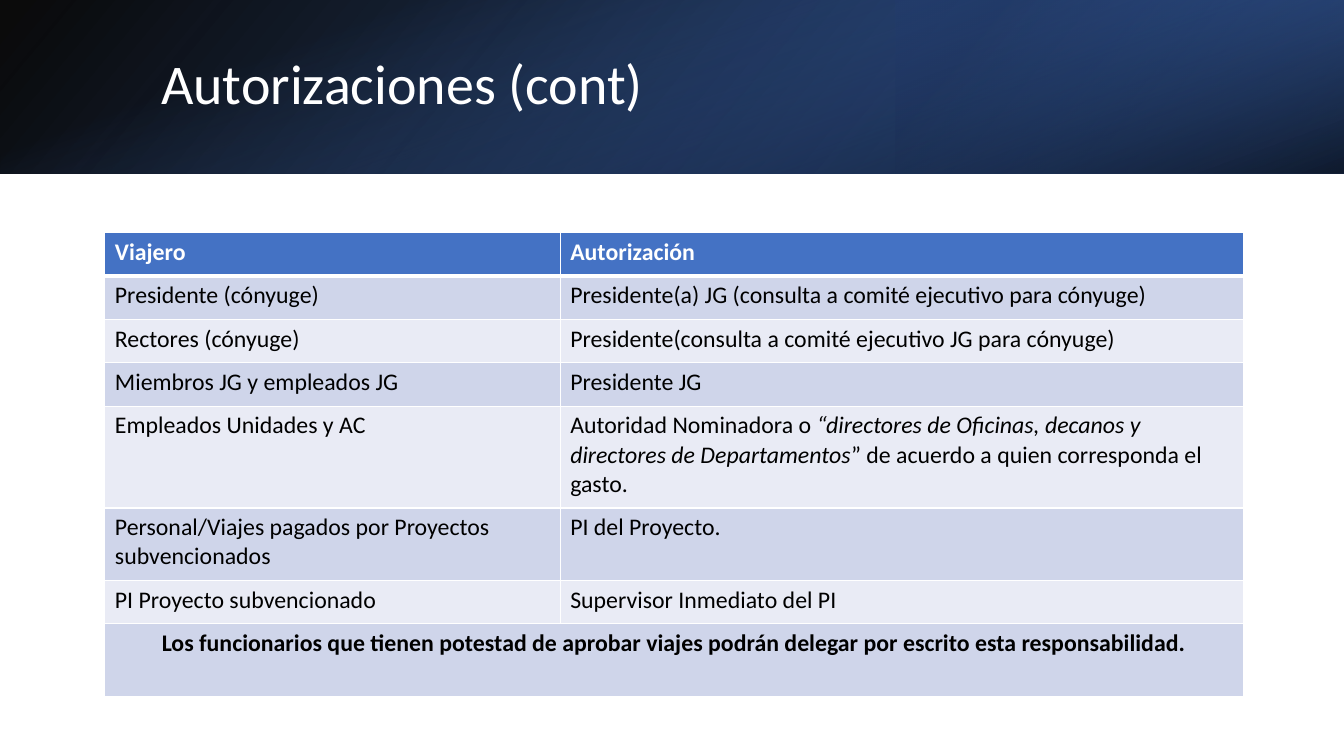
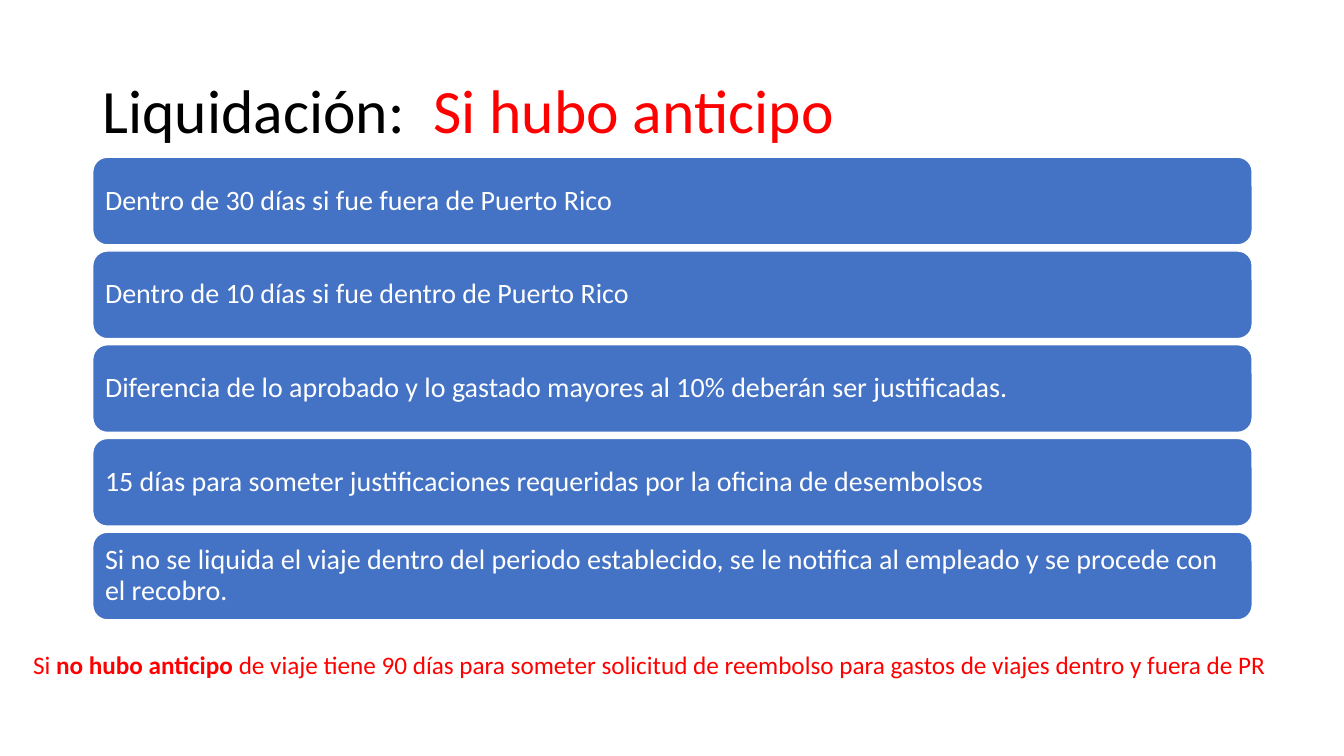
from lxml.etree import SubElement
from pptx import Presentation
from pptx.dml.color import RGBColor
from pptx.enum.shapes import MSO_SHAPE
from pptx.enum.text import MSO_ANCHOR, PP_ALIGN
from pptx.oxml import parse_xml
from pptx.oxml.ns import nsdecls, qn
from pptx.util import Inches, Pt

WHITE = RGBColor(0xFF, 0xFF, 0xFF)
BLACK = RGBColor(0, 0, 0)
RED = RGBColor(0xFF, 0, 0)
BLUE = RGBColor(0x44, 0x72, 0xC4)
DEEP_BLUE = RGBColor(0x2F, 0x55, 0x97)
NAVY = RGBColor(0x20, 0x38, 0x64)
ROW_TINTS = (RGBColor(0xE9, 0xEB, 0xF5), RGBColor(0xCF, 0xD5, 0xEA))

WIDTH, HEIGHT = 13.33, 7.5
BAND = 1.72
TITLE = {"line_spacing": 0.9}
PLAIN = {}


def write(frame, runs, size, color, layout, anchor=MSO_ANCHOR.TOP):
    frame.word_wrap = True
    frame.vertical_anchor = anchor
    para = frame.paragraphs[0]
    for name, value in layout.items():
        setattr(para, name, value)
    for text, changes in runs:
        span = para.add_run()
        span.text = text
        font = {"name": "Calibri", "size": Pt(size), "bold": False, "italic": False}
        for name, value in (font | changes).items():
            if name != "color":
                setattr(span.font, name, value)
        span.font.color.rgb = changes.get("color", color)


def add_box(page, place, shape=None):
    lengths = [Inches(length) for length in place]
    if shape is None:
        return page.shapes.add_textbox(*lengths)
    box = page.shapes.add_shape(shape, *lengths)
    box.shadow.inherit = False
    return box


deck = Presentation()
deck.slide_width, deck.slide_height = Inches(WIDTH), Inches(HEIGHT)
blank = deck.slide_layouts[6]

page = deck.slides.add_slide(blank)
middle = (WIDTH - BAND) / 2
band_layers = [
    ((0, 0, WIDTH, BAND), 0, True, 140, [(0, BLACK, 96), (100, DEEP_BLUE, 100)]),
    ((WIDTH * 2 / 3, 0, WIDTH / 3, BAND), 180, True, 320, [(19, NAVY, 68), (100, BLUE, 79)]),
    ((middle, -middle, BAND, WIDTH), 90, False, 340, [(23, BLUE, 0), (99, BLACK, 74)]),
]
for place, rotation, flipped, angle, stops in band_layers:
    layer = add_box(page, place, MSO_SHAPE.RECTANGLE)
    layer.rotation = rotation
    layer.line.fill.background()
    layer.fill.background()
    properties = layer.element.spPr
    if flipped:
        properties.find(qn("a:xfrm")).set("flipH", "1")
    stop_xml = "".join(
        f'<a:gs pos="{position * 1000}"><a:srgbClr val="{color}">'
        f'<a:alpha val="{opacity * 1000}"/></a:srgbClr></a:gs>'
        for position, color, opacity in stops
    )
    gradient = parse_xml(
        f'<a:gradFill {nsdecls("a")}><a:gsLst>{stop_xml}</a:gsLst>'
        f'<a:lin ang="{angle * 60000}" scaled="0"/></a:gradFill>'
    )
    properties.replace(properties.find(qn("a:noFill")), gradient)

title = add_box(page, (1.5, 0.38, 10.98, 0.96))
write(title.text_frame, [("Autorizaciones (cont)", PLAIN)], 40, WHITE, TITLE, MSO_ANCHOR.MIDDLE)

rows = [
    (1, "Viajero", "Autorización"),
    (1, "Presidente (cónyuge)", "Presidente(a) JG (consulta a comité ejecutivo para cónyuge)"),
    (1, "Rectores (cónyuge)", "Presidente(consulta a comité ejecutivo JG para cónyuge)"),
    (1, "Miembros JG y empleados JG", "Presidente JG"),
    (3, "Empleados Unidades y AC", [
        ("Autoridad Nominadora o ", PLAIN),
        ("“directores de Oficinas, decanos y directores de Departamentos", {"italic": True}),
        ("” de acuerdo a quien corresponda el gasto.", PLAIN),
    ]),
    (2, "Personal/Viajes pagados por Proyectos subvencionados", "PI del Proyecto."),
    (1, "PI Proyecto subvencionado", "Supervisor Inmediato del PI"),
    (2, "Los funcionarios que tienen potestad de aprobar viajes podrán delegar por escrito "
        "esta responsabilidad.", ""),
]
last = len(rows) - 1
table_place = [Inches(length) for length in (1.04, 2.31, 11.29, 4.59)]
table = page.shapes.add_table(len(rows), 2, *table_place).table
for column, share in zip(table.columns, (0.4, 0.6)):
    column.width = Inches(11.29 * share)
table.cell(last, 0).merge(table.cell(last, 1))

for row, (lines, *texts) in enumerate(rows):
    table.rows[row].height = Inches(0.14 + 0.29 * lines)
    heading = row == 0
    for column, content in enumerate(texts):
        cell = table.cell(row, column)
        cell.fill.solid()
        cell.fill.fore_color.rgb = BLUE if heading else ROW_TINTS[row % 2]
        edges = {"lnL": 1, "lnR": 1, "lnT": 3 if row == 1 else 1, "lnB": 3 if heading else 1}
        cell_properties = cell._tc.get_or_add_tcPr()
        for index, (edge, points) in enumerate(edges.items()):
            border = parse_xml(
                f'<a:{edge} {nsdecls("a")} w="{Pt(points)}"><a:solidFill>'
                f'<a:srgbClr val="{WHITE}"/></a:solidFill></a:{edge}>'
            )
            cell_properties.insert(index, border)
        if content:
            weight = {"bold": row in (0, last)}
            runs = [(content, weight)] if isinstance(content, str) else content
            layout = {"alignment": PP_ALIGN.CENTER} if row == last else PLAIN
            write(cell.text_frame, runs, 17, WHITE if heading else BLACK, layout)

page = deck.slides.add_slide(blank)
title = add_box(page, (0.92, 0.4, 11.5, 1.45))
title_runs = [("Liquidación:  ", PLAIN), ("Si hubo anticipo", {"color": RED})]
write(title.text_frame, title_runs, 44, BLACK, TITLE, MSO_ANCHOR.MIDDLE)

rules = [
    "Dentro de 30 días si fue fuera de Puerto Rico",
    "Dentro de 10 días si fue dentro de Puerto Rico",
    "Diferencia de lo aprobado y lo gastado mayores al 10% deberán ser justificadas.",
    "15 días para someter justificaciones requeridas por la oficina de desembolsos",
    "Si no se liquida el viaje dentro del periodo establecido, se le notifica al empleado "
    "y se procede con el recobro.",
]
for index, rule in enumerate(rules):
    bar = add_box(page, (0.92, 1.56 + 0.93 * index, 11.5, 0.87), MSO_SHAPE.ROUNDED_RECTANGLE)
    bar.fill.solid()
    bar.fill.fore_color.rgb = BLUE
    bar.line.color.rgb = WHITE
    bar.line.width = Pt(1)
    for side in ("left", "top", "right", "bottom"):
        setattr(bar.text_frame, f"margin_{side}", Inches(0.08))
    layout = {"line_spacing": 0.9, "alignment": PP_ALIGN.LEFT}
    write(bar.text_frame, [(rule, PLAIN)], 20, WHITE, layout, MSO_ANCHOR.MIDDLE)

note = add_box(page, (0.23, 6.39, 12.48, 0.4))
note_runs = [
    ("Si ", PLAIN),
    ("no hubo anticipo ", {"bold": True}),
    ("de viaje tiene 90 días para someter solicitud de reembolso para gastos de viajes "
     "dentro y fuera de PR", PLAIN),
]
write(note.text_frame, note_runs, 18, RED, PLAIN)

for page in deck.slides:
    for box in page.shapes:
        if box.has_text_frame and not box.text_frame.text:
            box.text_frame.word_wrap = True

deck.save("out.pptx")
